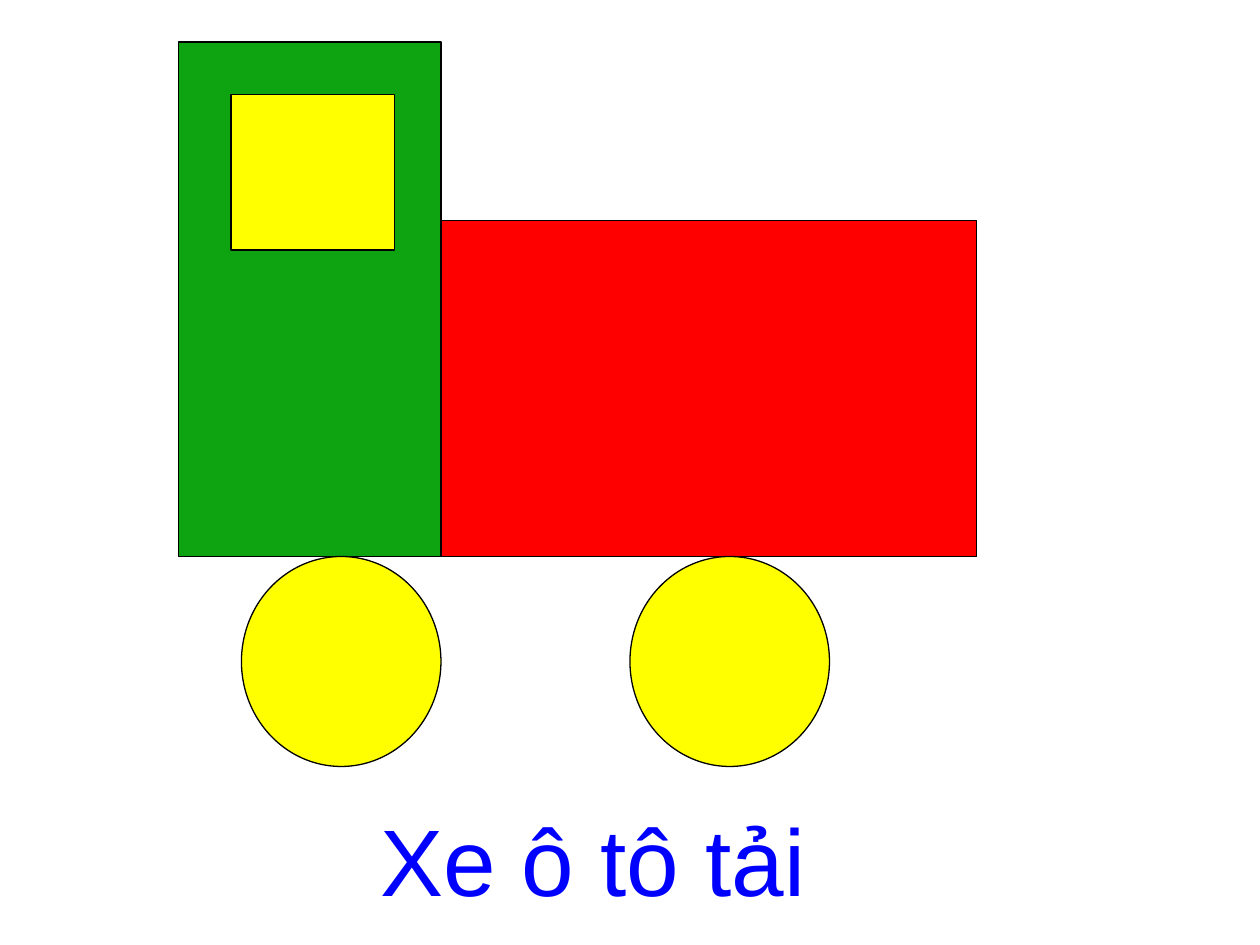
from pptx import Presentation, util as u
from pptx.dml.color import RGBColor
from pptx.enum import shapes, text

HUES = {"cab": "0DA311", "bed": "FF0000", "sun": "FFFF00",
        "line": "000000", "name": "0000FF"}

deck = Presentation()
deck.slide_width, deck.slide_height = u.Inches(10), u.Inches(7.5)
slide = deck.slides.add_slide(deck.slide_layouts[5])

# Grid of 120 columns by 90 rows
unit = deck.slide_width / 120


def grid(*cells):
    return [round(cell * unit) for cell in cells]


# Truck parts, from back to front: shape, fill, left, top, width, height
kind = shapes.MSO_SHAPE
base = 53
parts = [
    (kind.RECTANGLE, "bed", 42, 21, 51, base - 21),
    (kind.RECTANGLE, "cab", 17, 4, 25, base - 4),
    (kind.FLOWCHART_CONNECTOR, "sun", 23, base, 19, 20),
    (kind.FLOWCHART_CONNECTOR, "sun", 60, base, 19, 20),
    (kind.RECTANGLE, "sun", 22, 9, 15.6, 14.8),
]
for form, hue, *box in parts:
    part = slide.shapes.add_shape(form, *grid(*box))
    part.shadow.inherit = False
    part.fill.solid()
    part.fill.fore_color.rgb = RGBColor.from_string(HUES[hue])
    part.line.color.rgb = RGBColor.from_string(HUES["line"])
    part.line.width = u.Pt(0.75)

# Caption under the truck
title = slide.shapes.title
title.left, title.top, title.width, title.height = grid(35, 75.8, 52, 11.5)
frame = title.text_frame
frame.text = "Xe ô tô tải"
frame.word_wrap = True
frame.auto_size = text.MSO_AUTO_SIZE.NONE
frame.vertical_anchor = text.MSO_ANCHOR.TOP
para = frame.paragraphs[0]
para.alignment = text.PP_ALIGN.LEFT
para.font.name = "Arial"
para.font.size = u.Pt(54)
para.font.color.rgb = RGBColor.from_string(HUES["name"])

deck.save("out.pptx")
